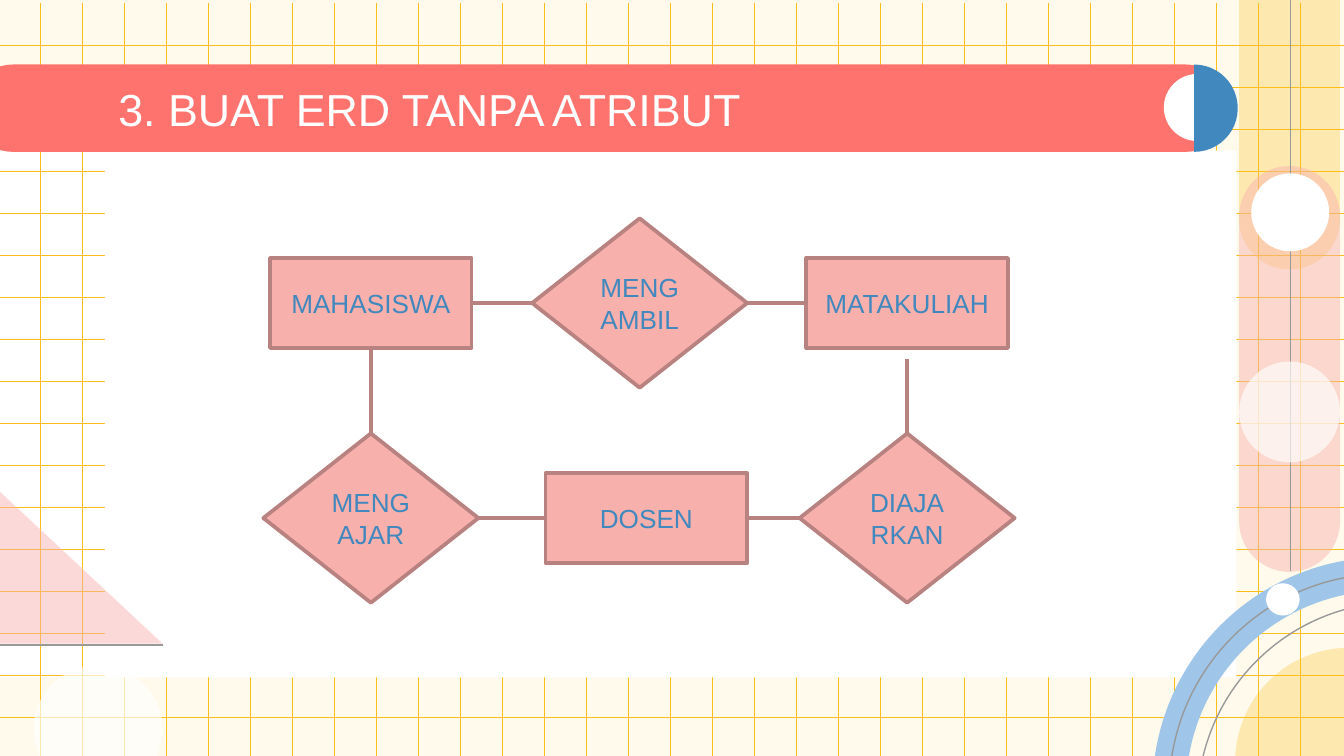
from dataclasses import dataclass

from pptx import Presentation
from pptx.dml.color import RGBColor
from pptx.enum.shapes import MSO_CONNECTOR, MSO_SHAPE
from pptx.enum.text import MSO_ANCHOR, MSO_AUTO_SIZE, PP_ALIGN
from pptx.oxml import parse_xml
from pptx.oxml.ns import nsdecls, qn
from pptx.util import Inches, Pt

WIDTH, HEIGHT = Inches(10), Inches(5.625)
BOTTOM = 56.25
TOP_SIDE, LEFT_SIDE, BOTTOM_SIDE, RIGHT_SIDE = range(4)


@dataclass(frozen=True)
class Theme:
    """Colours, font, type sizes and line widths of the slide."""
    paper: str = "FFFAEB"
    white: str = "FFFFFF"
    yellow: str = "FBBE18"
    coral: str = "FF736E"
    pink: str = "F8B0AD"
    brown: str = "B78280"
    blue: str = "4088BE"
    sky: str = "9FC5E8"
    grey: str = "999999"
    font: str = "Arial"
    title_size: float = 24
    node_size: float = 14
    grid_width: float = 0.19
    thin_width: float = 0.75
    node_width: float = 2
    ring_width: float = 18


THEME = Theme()
NODE_SIZES = {MSO_SHAPE.RECTANGLE: (15, 6.7), MSO_SHAPE.DIAMOND: (16, 12.6)}
UPPER_ROW, LOWER_ROW = 22.55, 38.55
NODES = [
    ("MAHASISWA", MSO_SHAPE.RECTANGLE, 27.6, UPPER_ROW),
    ("MENGAMBIL", MSO_SHAPE.DIAMOND, 47.6, UPPER_ROW),
    ("MATAKULIAH", MSO_SHAPE.RECTANGLE, 67.5, UPPER_ROW),
    ("DIAJARKAN", MSO_SHAPE.DIAMOND, 67.5, LOWER_ROW),
    ("DOSEN", MSO_SHAPE.RECTANGLE, 48.1, LOWER_ROW),
    ("MENGAJAR", MSO_SHAPE.DIAMOND, 27.6, LOWER_ROW),
]
LINKS = [
    ("MAHASISWA", RIGHT_SIDE, "MENGAMBIL", LEFT_SIDE),
    ("MENGAMBIL", RIGHT_SIDE, "MATAKULIAH", LEFT_SIDE),
    ("DOSEN", RIGHT_SIDE, "DIAJARKAN", LEFT_SIDE),
    ("MENGAJAR", RIGHT_SIDE, "DOSEN", LEFT_SIDE),
    ("MAHASISWA", BOTTOM_SIDE, "MENGAJAR", TOP_SIDE),
]


def share(percent):
    """Turn a percentage of the slide width into a length."""
    return round(WIDTH * percent / 100)


def add_figure(page, kind, place, fill=None, alpha=None, line=None, width=0, adjust=()):
    """Add a preset shape with an optional fill, opacity and outline."""
    figure = page.shapes.add_shape(kind, *map(share, place))
    figure.shadow.inherit = False
    for index, value in enumerate(adjust):
        figure.adjustments[index] = value
    if fill:
        figure.fill.solid()
        figure.fill.fore_color.rgb = RGBColor.from_string(fill)
    else:
        figure.fill.background()
    if alpha:
        colour = next(figure.element.spPr.iter(qn("a:srgbClr")))
        colour.append(parse_xml(f'<a:alpha {nsdecls("a")} val="{alpha * 1000}"/>'))
    if line:
        figure.line.color.rgb = RGBColor.from_string(line)
        figure.line.width = Pt(width)
    else:
        figure.line.fill.background()
    return figure


def add_line(page, start, end, colour, width):
    """Add a straight connector between two points."""
    connector = page.shapes.add_connector(
        MSO_CONNECTOR.STRAIGHT, *map(share, (*start, *end)))
    connector.line.color.rgb = RGBColor.from_string(colour)
    connector.line.width = Pt(width)
    connector.element.spPr.append(parse_xml(f'<a:effectLst {nsdecls("a")}/>'))
    return connector


def add_span(para, text, size, colour):
    """Add one formatted run to a paragraph."""
    span = para.add_run()
    span.text = text
    span.font.name = THEME.font
    span.font.size = Pt(size)
    span.font.color.rgb = RGBColor.from_string(colour)


def add_grid(page):
    """Rule the page into squares of one thirty-second of its width."""
    step = 100 / 32
    for column in range(31):
        x = 3 + column * step
        add_line(page, (x, 0.2), (x, BOTTOM), THEME.yellow, THEME.grid_width)
    for row in range(17):
        y = 3.35 + row * step
        add_line(page, (0, y), (100, y), THEME.yellow, THEME.grid_width)


def add_band(page):
    """Add the white panel and the title band with its half discs."""
    add_figure(page, MSO_SHAPE.RECTANGLE, (7.8, 11.2, 84.2, 39.2), THEME.white)
    add_figure(page, MSO_SHAPE.ROUNDED_RECTANGLE, (-2.3, 4.8, 93.8, 6.5),
               THEME.coral, adjust=(0.5,))
    add_figure(page, MSO_SHAPE.OVAL, (86.6, 5.5, 5, 5), THEME.white)
    add_figure(page, MSO_SHAPE.PIE, (85.6, 4.8, 6.5, 6.5), THEME.blue, adjust=(162, 54))


def add_corner(page):
    """Add the quarter rings and the sun in the lower right corner."""
    quarter = (108, 162)
    outer, inner = (87, 42.7, 32.1, 32.1), (89.1, 44.8, 30, 30)
    for place, colour, width in (
            (outer, THEME.sky, THEME.ring_width),
            (outer, THEME.grey, THEME.thin_width),
            (inner, THEME.grey, THEME.thin_width)):
        add_figure(page, MSO_SHAPE.ARC, place, line=colour, width=width, adjust=quarter)
    add_figure(page, MSO_SHAPE.OVAL, (94.2, 43.4, 2.5, 2.4), THEME.white)
    add_figure(page, MSO_SHAPE.PIE, (91.9, 48.2, 17, 17), THEME.yellow, 28, adjust=quarter)


def add_margins(page):
    """Add the hanging beads on the right and the shapes on the left."""
    add_figure(page, MSO_SHAPE.ROUNDED_RECTANGLE, (92.2, 12.35, 7.5, 30.2),
               THEME.pink, 47, adjust=(0.5,))
    add_line(page, (96, 0), (96, 42.5), THEME.grey, THEME.thin_width)
    add_figure(page, MSO_SHAPE.OVAL, (92.2, 26.9, 7.5, 7.5), THEME.white, 66)
    add_figure(page, MSO_SHAPE.OVAL, (93.1, 12.9, 5.8, 5.8), THEME.white)
    add_figure(page, MSO_SHAPE.RIGHT_TRIANGLE, (0, 36.6, 12.1, 11.3), THEME.pink, 47)
    add_figure(page, MSO_SHAPE.OVAL, (2.5, 49.5, 9.6, 9.5), THEME.white, 66)
    add_line(page, (0, 48), (12.1, 48), THEME.grey, THEME.thin_width)


def fill_title(page, text):
    """Place the title over the band and write it."""
    title = page.shapes.title
    title.element.getparent().append(title.element)
    title.left, title.top, title.width, title.height = map(share, (7.8, 4.8, 77.2, 6.5))
    frame = title.text_frame
    frame.auto_size = MSO_AUTO_SIZE.NONE
    frame.word_wrap = True
    frame.vertical_anchor = MSO_ANCHOR.MIDDLE
    para = frame.paragraphs[0]
    para.alignment = PP_ALIGN.LEFT
    add_span(para, text, THEME.title_size, THEME.white)


def add_node(page, text, kind, column, row):
    """Add an entity or a relation centred on a column and a row."""
    width, height = NODE_SIZES[kind]
    node = add_figure(page, kind, (column - width / 2, row - height / 2, width, height),
                      THEME.pink, line=THEME.brown, width=THEME.node_width)
    node.text_frame.word_wrap = True
    node.text_frame.vertical_anchor = MSO_ANCHOR.MIDDLE
    para = node.text_frame.paragraphs[0]
    para.alignment = PP_ALIGN.CENTER
    add_span(para, text, THEME.node_size, THEME.blue)
    return node


def add_diagram(page):
    """Add the nodes and join them."""
    nodes = {node[0]: add_node(page, *node) for node in NODES}
    for source, source_side, target, target_side in LINKS:
        link = add_line(page, (0, 0), (0, 0), THEME.brown, THEME.node_width)
        link.begin_connect(nodes[source], source_side)
        link.end_connect(nodes[target], target_side)
    link = add_line(page, (67.5, 26.7), (67.5, 32.2), THEME.brown, THEME.node_width)
    link.end_connect(nodes["DIAJARKAN"], TOP_SIDE)


def main():
    """Build the slide and save it."""
    deck = Presentation()
    deck.slide_width, deck.slide_height = WIDTH, HEIGHT
    page = deck.slides.add_slide(deck.slide_layouts[5])
    page.background.fill.solid()
    page.background.fill.fore_color.rgb = RGBColor.from_string(THEME.paper)
    add_figure(page, MSO_SHAPE.RECTANGLE, (-0.8, 11.2, 9.6, 39.2), THEME.white)
    add_figure(page, MSO_SHAPE.ROUNDED_RECTANGLE, (92.2, -5.15, 7.5, 25.2),
               THEME.yellow, 28, adjust=(0.5,))
    add_grid(page)
    add_band(page)
    add_corner(page)
    add_margins(page)
    fill_title(page, "3. BUAT ERD TANPA ATRIBUT")
    add_diagram(page)
    deck.save("out.pptx")


if __name__ == "__main__":
    main()
